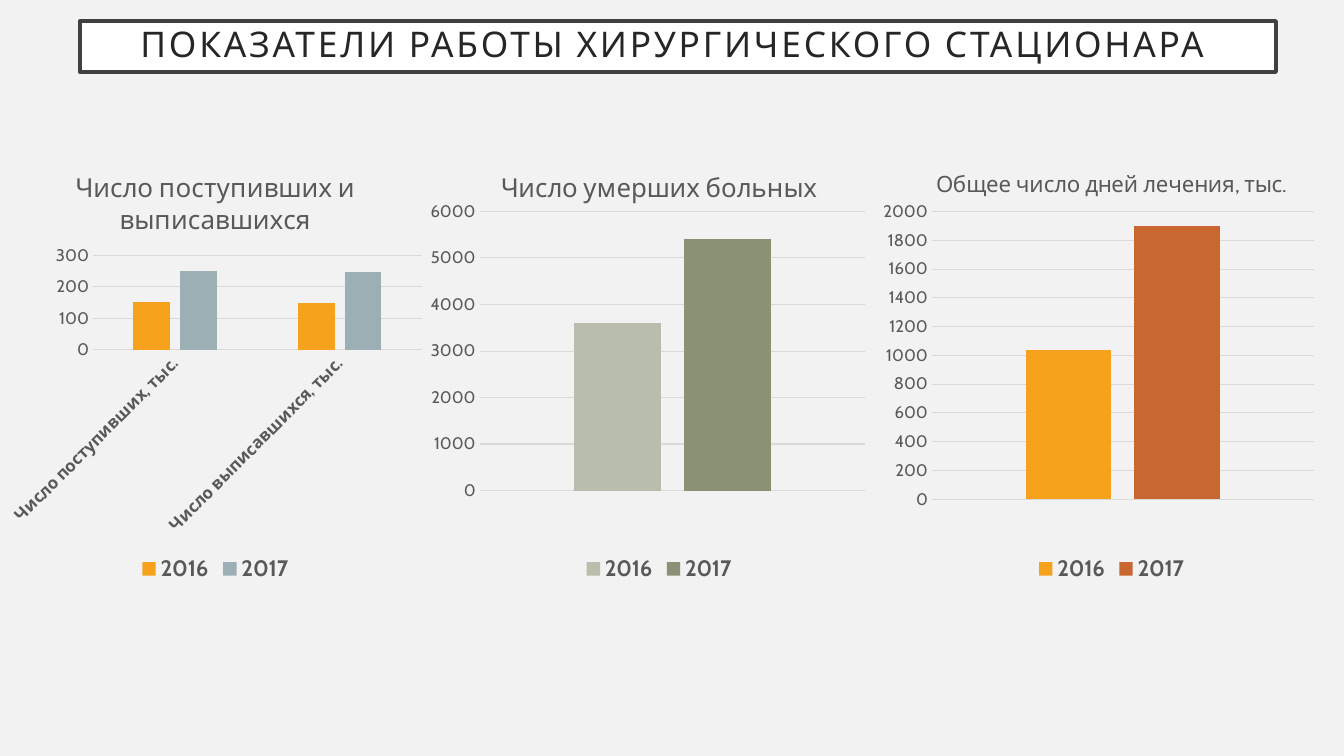
"""Build the slide on the performance of a surgical hospital."""
from lxml import etree
from pptx import Presentation
from pptx.chart.data import CategoryChartData
from pptx.dml.color import RGBColor
from pptx.enum.chart import XL_CHART_TYPE as CHART, XL_LEGEND_POSITION as LEGEND
from pptx.enum.chart import XL_TICK_MARK as TICK
from pptx.enum.shapes import MSO_SHAPE as SHAPE
from pptx.enum.text import MSO_ANCHOR as ANCHOR, PP_ALIGN as ALIGN
from pptx.oxml.ns import qn
from pptx.util import Pt

WHITE = RGBColor(0xFF, 0xFF, 0xFF)
PAPER = RGBColor(0xF2, 0xF2, 0xF2)
GRID = RGBColor(0xD9, 0xD9, 0xD9)
GREY = RGBColor(0x59, 0x59, 0x59)
FRAME = RGBColor(0x40, 0x40, 0x40)
INK = RGBColor(0x26, 0x26, 0x26)
ORANGE = RGBColor(0xF6, 0xA2, 0x1D)
STEEL = RGBColor(0x9B, 0xAF, 0xB5)
SAGE = RGBColor(0xB9, 0xBD, 0xAB)
OLIVE = RGBColor(0x8A, 0x91, 0x74)
RUST = RGBColor(0xC9, 0x67, 0x31)

FONT = "Cabin"
TITLE = "ПОКАЗАТЕЛИ РАБОТЫ ХИРУРГИЧЕСКОГО СТАЦИОНАРА "
YEARS = ("2016", "2017")
CHARTS = [
    {"title": "Число поступивших и выписавшихся", "size": 18.6, "width": 307.5,
     "cats": ["Число поступивших, тыс.", "Число выписавшихся, тыс."],
     "values": [(151, 149), (250, 246)], "colors": (ORANGE, STEEL), "plot": None},
    {"title": "Число умерших больных", "size": 18.6, "width": 323.5,
     "cats": ["1"], "values": [(3600,), (5400,)], "colors": (SAGE, OLIVE),
     "plot": {"x": 0.1, "y": 0.14, "w": 0.86, "h": 0.64}},
    {"title": "Общее число дней лечения, тыс.", "size": 16, "width": 323.5,
     "cats": ["1"], "values": [(1040,), (1900,)], "colors": (ORANGE, RUST),
     "plot": {"x": 0.1, "y": 0.14, "w": 0.85, "h": 0.66}},
]
CHART_TOP, CHART_HEIGHT = 107.5, 311.5


def set_font(font, size, color=GREY, bold=False):
    values = {"name": FONT, "size": Pt(size), "bold": bold}
    for key, value in values.items():
        setattr(font, key, value)
    font.color.rgb = color


def set_line(line, color, width):
    line.color.rgb = color
    line.width = Pt(width)


def place_plot(chart, plot):
    area = chart.plots[0]._element.getparent()
    for old in area.findall(qn("c:layout")):
        area.remove(old)
    layout = etree.Element(qn("c:layout"))
    area.insert(0, layout)
    manual = etree.SubElement(layout, qn("c:manualLayout"))
    values = {"layoutTarget": "inner", "xMode": "edge", "yMode": "edge", **plot}
    for key, value in values.items():
        etree.SubElement(manual, qn(f"c:{key}")).set("val", str(value))


def add_heading(slide):
    sp = slide.shapes.add_shape(SHAPE.RECTANGLE, Pt(57), Pt(15), Pt(854.5), Pt(36.5))
    sp.shadow.inherit = False
    sp.fill.solid()
    sp.fill.fore_color.rgb = WHITE
    set_line(sp.line, FRAME, 2.5)
    tf = sp.text_frame
    values = {"word_wrap": True, "vertical_anchor": ANCHOR.MIDDLE,
              "margin_left": Pt(14.4), "margin_right": Pt(14.4),
              "margin_top": 0, "margin_bottom": 0}
    for key, value in values.items():
        setattr(tf, key, value)
    p = tf.paragraphs[0]
    p.alignment = ALIGN.CENTER
    p.line_spacing = 0.9
    r = p.add_run()
    r.text = TITLE
    set_font(r.font, 25.2, INK)
    r.font._element.set("spc", "200")


def add_column_chart(slide, left, item):
    data = CategoryChartData()
    data.categories = item["cats"]
    for year, values in zip(YEARS, item["values"]):
        data.add_series(year, values)
    chart = slide.shapes.add_chart(CHART.COLUMN_CLUSTERED, Pt(left), Pt(CHART_TOP),
                                   Pt(item["width"]), Pt(CHART_HEIGHT), data).chart
    set_font(chart.font, 10)
    chart.has_title = True
    chart.chart_title.include_in_layout = False
    p = chart.chart_title.text_frame.paragraphs[0]
    r = p.add_run()
    r.text = item["title"]
    set_font(r.font, item["size"])

    chart.has_legend = True
    chart.legend.position = LEGEND.BOTTOM
    chart.legend.include_in_layout = False
    set_font(chart.legend.font, 16, bold=True)

    plot = chart.plots[0]
    for key, value in {"gap_width": 219, "overlap": -27, "vary_by_categories": False}.items():
        setattr(plot, key, value)
    for series, color in zip(plot.series, item["colors"]):
        series.format.fill.solid()
        series.format.fill.fore_color.rgb = color

    cat_axis, val_axis = chart.category_axis, chart.value_axis
    for axis in (cat_axis, val_axis):
        axis.major_tick_mark = axis.minor_tick_mark = TICK.NONE
        set_font(axis.tick_labels.font, 12, bold=axis is cat_axis)
    set_line(cat_axis.format.line, GRID, 0.75)
    val_axis.format.line.fill.background()
    val_axis.has_major_gridlines = True
    set_line(val_axis.major_gridlines.format.line, GRID, 0.75)
    if item["plot"]:
        cat_axis.visible = False
        place_plot(chart, item["plot"])
    else:
        cat_axis._element.find(qn("c:txPr")).find(qn("a:bodyPr")).set("rot", "-2700000")


def main():
    prs = Presentation()
    prs.slide_width, prs.slide_height = Pt(960), Pt(540)
    slide = prs.slides.add_slide(prs.slide_layouts[6])
    slide.background.fill.solid()
    slide.background.fill.fore_color.rgb = PAPER
    add_heading(slide)
    left = 0
    for item in CHARTS:
        add_column_chart(slide, left, item)
        left += item["width"]
    prs.save("out.pptx")


if __name__ == "__main__":
    main()
